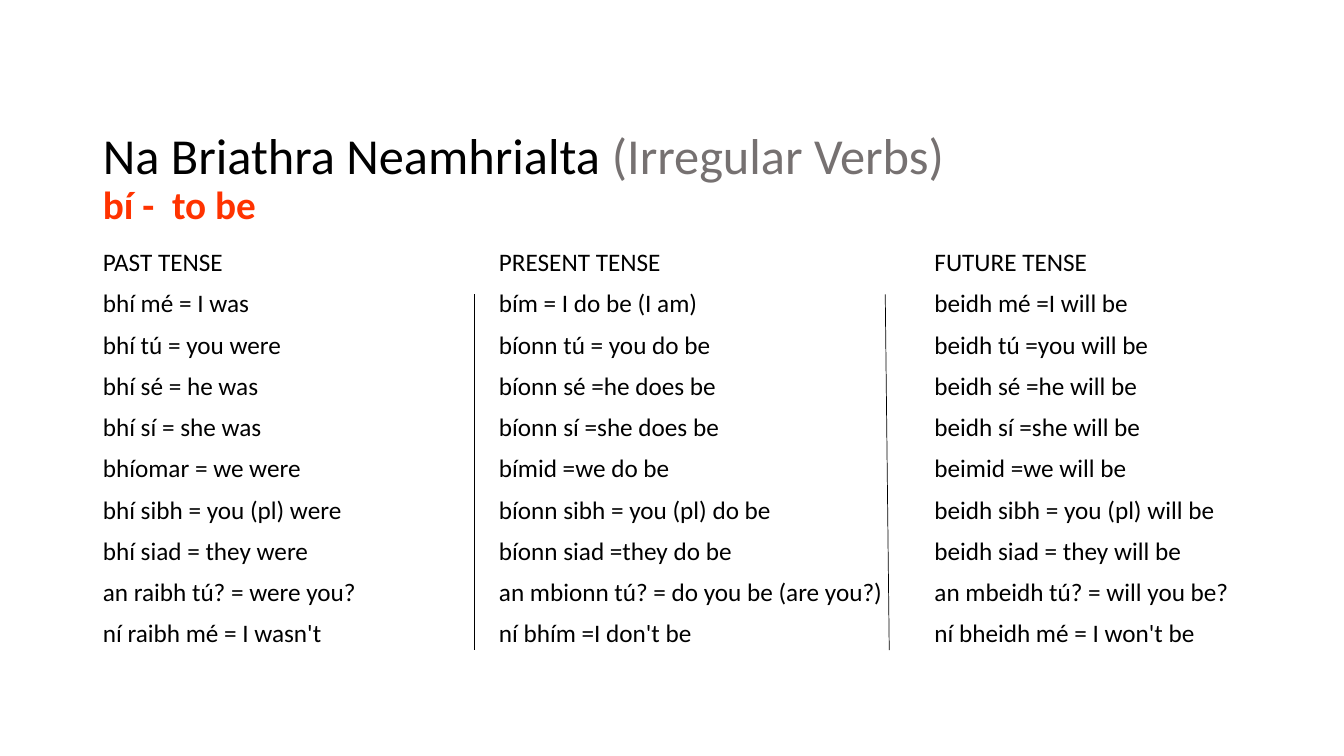
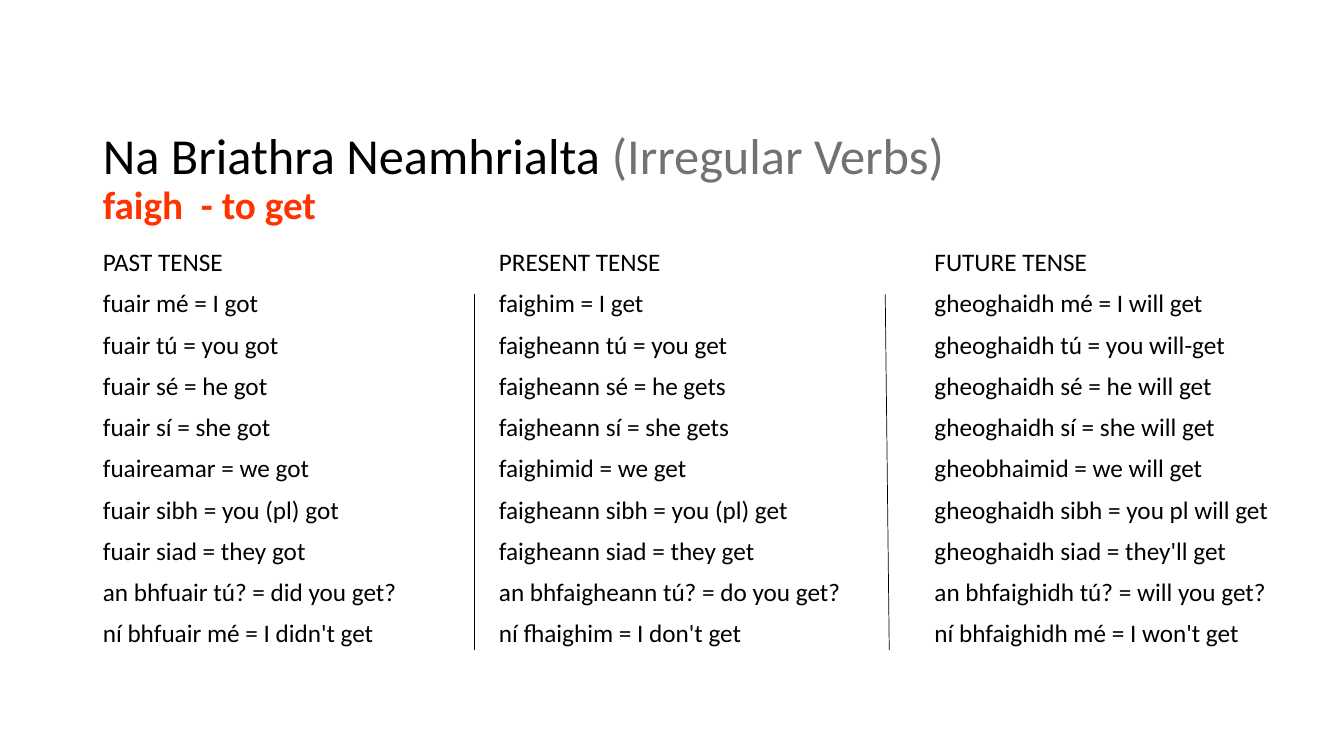
from lxml import etree
from pptx import Presentation
from pptx.dml.color import RGBColor
from pptx.enum.shapes import MSO_CONNECTOR
from pptx.enum.text import MSO_ANCHOR, MSO_AUTO_SIZE, PP_ALIGN
from pptx.oxml.ns import qn
from pptx.util import Inches, Pt

LINE = MSO_CONNECTOR.STRAIGHT
TOP = MSO_ANCHOR.TOP
NO_FIT = MSO_AUTO_SIZE.NONE
LEFT = PP_ALIGN.LEFT

FONT = "Calibri"
BLACK, GREY, RED = "000000", "767171", "FF3300"

# Left edge and width of each tense column
COLUMNS = [(0.92, 3.57), (4.85, 4.11), (9.17, 3.57)]
COL_TOP, COL_HEIGHT = 2.43, 4.3
# Top and bottom x of each divider
RULES = [(4.7, 4.7), (8.78, 8.82)]
RULE_TOP, RULE_END = 2.92, 6.45

VERBS = [
    ("bí -  to be", {
        "PAST TENSE": [
            "bhí mé = I was", "bhí tú = you were", "bhí sé = he was",
            "bhí sí = she was", "bhíomar = we were",
            "bhí sibh = you (pl) were", "bhí siad = they were",
            "an raibh tú? = were you?", "ní raibh mé = I wasn't"],
        "PRESENT TENSE": [
            "bím = I do be (I am)", "bíonn tú = you do be",
            "bíonn sé =he does be", "bíonn sí =she does be",
            "bímid =we do be", "bíonn sibh = you (pl) do be",
            "bíonn siad =they do be",
            "an mbionn tú? = do you be (are you?)", "ní bhím =I don't be"],
        "FUTURE TENSE": [
            "beidh mé =I will be", "beidh tú =you will be",
            "beidh sé =he will be", "beidh sí =she will be",
            "beimid =we will be", "beidh sibh = you (pl) will be",
            "beidh siad = they will be", "an mbeidh tú? = will you be?",
            "ní bheidh mé = I won't be"],
    }),
    ("faigh  - to get", {
        "PAST TENSE": [
            "fuair mé = I got", "fuair tú = you got", "fuair sé = he got",
            "fuair sí = she got", "fuaireamar = we got",
            "fuair sibh = you (pl) got", "fuair siad = they got",
            "an bhfuair tú? = did you get?", "ní bhfuair mé = I didn't get"],
        "PRESENT TENSE": [
            "faighim = I get", "faigheann tú = you get",
            "faigheann sé = he gets", "faigheann sí = she gets",
            "faighimid = we get", "faigheann sibh = you (pl) get",
            "faigheann siad = they get", "an bhfaigheann tú? = do you get?",
            "ní fhaighim = I don't get"],
        "FUTURE TENSE": [
            "gheoghaidh mé = I will get", "gheoghaidh tú = you will-get",
            "gheoghaidh sé = he will get", "gheoghaidh sí = she will get",
            "gheobhaimid = we will get",
            "gheoghaidh sibh = you pl will get",
            "gheoghaidh siad = they'll get",
            "an bhfaighidh tú? = will you get?",
            "ní bhfaighidh mé = I won't get"],
    }),
]


def style(font, size, color, bold=False):
    font.name, font.size, font.bold = FONT, Pt(size), bold
    font.color.rgb = RGBColor.from_string(color)


def place(shape, left, top, width, height):
    """Move a text shape and give it top-anchored, wrapped text."""
    shape.left, shape.top = Inches(left), Inches(top)
    shape.width, shape.height = Inches(width), Inches(height)
    frame = shape.text_frame
    frame.word_wrap = True
    frame.auto_size = NO_FIT
    frame.vertical_anchor = TOP
    return frame


def drop_bullet(para):
    props = para._p.get_or_add_pPr()
    props.set("marL", "0")
    props.set("indent", "0")
    etree.SubElement(props, qn("a:buNone"))


def set_title(slide, verb):
    para = place(slide.shapes.title, 0.92, 1.25, 12.19, 1.1).paragraphs[0]
    para.alignment = LEFT
    para.line_spacing = 0.9
    parts = [("Na Briathra Neamhrialta ", 36, BLACK, False),
             ("(Irregular Verbs)", 36, GREY, False),
             (verb, 28, RED, True)]
    for text, size, color, bold in parts:
        if text == verb:
            para.add_line_break()
        run = para.add_run()
        run.text = text
        style(run.font, size, color, bold)


def fill_column(shape, left, width, lines):
    frame = place(shape, left, COL_TOP, width, COL_HEIGHT)
    for i, line in enumerate(lines):
        para = frame.add_paragraph() if i else frame.paragraphs[0]
        para.text = line
        drop_bullet(para)
        para.line_spacing = 0.9
        para.space_before = Pt(10 if i else 0)
        style(para.font, 18, BLACK)


def add_rule(slide, start, end):
    rule = slide.shapes.add_connector(
        LINE, Inches(start), Inches(RULE_TOP), Inches(end), Inches(RULE_END))
    rule.line.color.rgb = RGBColor.from_string(BLACK)
    rule.line.width = Pt(0.5)
    etree.SubElement(rule._element.spPr, qn("a:effectLst"))


def add_verb(deck, verb, tenses):
    slide = deck.slides.add_slide(deck.slide_layouts[1])
    set_title(slide, verb)
    for i, (tense, forms) in enumerate(tenses.items()):
        shape = (slide.shapes.add_textbox(0, 0, 0, 0) if i
                 else slide.placeholders[1])
        fill_column(shape, *COLUMNS[i], [tense] + forms)
    for start, end in RULES:
        add_rule(slide, start, end)


def main():
    deck = Presentation()
    deck.slide_width, deck.slide_height = Inches(13.33), Inches(7.5)
    for verb, tenses in VERBS:
        add_verb(deck, verb, tenses)
    deck.save("out.pptx")


if __name__ == "__main__":
    main()
